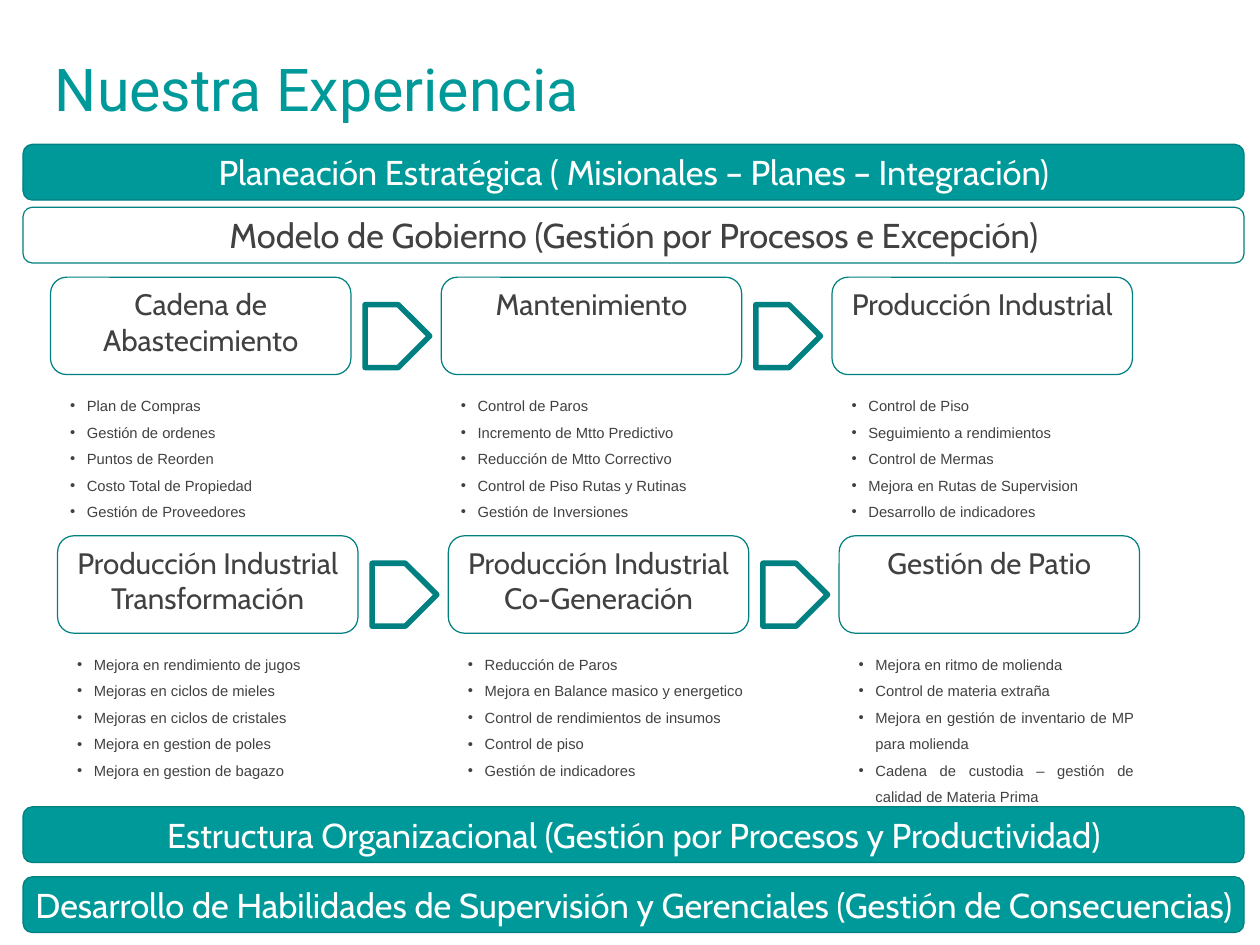
from pptx import Presentation
from pptx.dml.color import RGBColor
from pptx.enum.shapes import MSO_SHAPE as Shape
from pptx.enum.text import MSO_ANCHOR as Anchor, MSO_AUTO_SIZE as AutoSize, PP_ALIGN as Align
from pptx.oxml import parse_xml
from pptx.oxml.ns import nsdecls
from pptx.util import Emu, Pt

EMU_PER_PX = 9144
SLIDE_SIZE = (1422, 1067)
TEAL = RGBColor(0x00, 0x99, 0x99)
DARK_TEAL = RGBColor(0x00, 0x80, 0x80)
GRAY = RGBColor(0x41, 0x41, 0x41)
WHITE = RGBColor(0xFF, 0xFF, 0xFF)

BANDS = [
    (163, "Planeación Estratégica ( Misionales – Planes – Integración)", TEAL, WHITE),
    (234, "Modelo de Gobierno (Gestión por Procesos e Excepción)", None, GRAY),
    (911, "Estructura Organizacional (Gestión por Procesos y Productividad)", TEAL, WHITE),
    (990, "Desarrollo de Habilidades de Supervisión y Gerenciales (Gestión de Consecuencias)",
     TEAL, WHITE),
]

PROCESS_ROWS = [
    (57, 313, [
        ("Cadena de Abastecimiento",
         ["Plan de Compras", "Gestión de ordenes", "Puntos de Reorden",
          "Costo Total de Propiedad", "Gestión de Proveedores"]),
        ("Mantenimiento",
         ["Control de Paros", "Incremento de Mtto Predictivo", "Reducción de Mtto Correctivo",
          "Control de Piso Rutas y Rutinas", "Gestión de Inversiones"]),
        ("Producción Industrial",
         ["Control de Piso", "Seguimiento a rendimientos", "Control de Mermas",
          "Mejora en Rutas de Supervision", "Desarrollo de indicadores"]),
    ]),
    (65, 605, [
        ("Producción Industrial\nTransformación",
         ["Mejora en rendimiento de jugos", "Mejoras en ciclos de mieles",
          "Mejoras en ciclos de cristales", "Mejora en gestion de poles",
          "Mejora en gestion de bagazo"]),
        ("Producción Industrial\nCo-Generación",
         ["Reducción de Paros", "Mejora en Balance masico y energetico",
          "Control de rendimientos de insumos", "Control de piso", "Gestión de indicadores"]),
        ("Gestión de Patio",
         ["Mejora en ritmo de molienda", "Control de materia extraña",
          "Mejora en gestión de inventario de MP para molienda",
          "Cadena de custodia – gestión de calidad de Materia Prima"]),
    ]),
]
COLUMN_STEP = 441
PROCESS_WIDTH = 339


def px(*lengths):
    return [Emu(length * EMU_PER_PX) for length in lengths]


def set_margins(text_frame, horizontal, vertical):
    text_frame.margin_left, text_frame.margin_right = px(horizontal, horizontal)
    text_frame.margin_top, text_frame.margin_bottom = px(vertical, vertical)


def format_text(text_frame, font_name, size, color, alignment):
    for paragraph in text_frame.paragraphs:
        paragraph.alignment = alignment
        for run in paragraph.runs:
            run.font.name = font_name
            run.font.size = Pt(size)
            run.font.color.rgb = color


def add_outlined_shape(slide, kind, box, fill=None, line_width=1):
    shape = slide.shapes.add_shape(kind, *px(*box))
    shape.shadow.inherit = False
    if fill is None:
        shape.fill.background()
    else:
        shape.fill.solid()
        shape.fill.fore_color.rgb = fill
    shape.line.color.rgb = DARK_TEAL
    shape.line.width = Pt(line_width)
    return shape


def add_title(slide, text):
    title = slide.shapes.title
    title.left, title.top, title.width, title.height = px(62, 59, 1035, 81)
    text_frame = title.text_frame
    text_frame.text = text
    text_frame.auto_size = AutoSize.NONE
    text_frame.vertical_anchor = Anchor.MIDDLE
    set_margins(text_frame, 0, 0)
    format_text(text_frame, "Roboto", 48, TEAL, Align.LEFT)


def add_band(slide, top, text, fill, color):
    band = add_outlined_shape(slide, Shape.ROUNDED_RECTANGLE, (26, top, 1378, 63), fill)
    band.text_frame.text = text
    band.text_frame.word_wrap = False
    band.text_frame.vertical_anchor = Anchor.TOP
    format_text(band.text_frame, "Cabin", 28, color, Align.CENTER)


def add_process(slide, left, top, name):
    box = (left, top, PROCESS_WIDTH, 110)
    process = add_outlined_shape(slide, Shape.ROUNDED_RECTANGLE, box)
    process.text_frame.text = name
    process.text_frame.word_wrap = True
    process.text_frame.vertical_anchor = Anchor.TOP
    format_text(process.text_frame, "Cabin", 24, GRAY, Align.CENTER)


def add_bullets(slide, left, top, items):
    text_box = slide.shapes.add_textbox(*px(left, top, PROCESS_WIDTH, 164))
    text_frame = text_box.text_frame
    text_frame.text = "\n".join(items)
    text_frame.word_wrap = True
    text_frame.auto_size = AutoSize.SHAPE_TO_FIT_TEXT
    set_margins(text_frame, 14, 7)
    indent, = px(19)
    for paragraph in text_frame.paragraphs:
        properties = paragraph._p.get_or_add_pPr()
        properties.set("marL", str(indent))
        properties.set("indent", str(-indent))
        properties.append(parse_xml(f'<a:buFont {nsdecls("a")} typeface="Arial"/>'))
        properties.append(parse_xml(f'<a:buChar {nsdecls("a")} char="•"/>'))
        paragraph.line_spacing = 1.5
    format_text(text_frame, "Arial", 12, GRAY, Align.JUSTIFY)


def add_process_row(slide, row_left, top, processes):
    for column, (name, items) in enumerate(processes):
        left = row_left + column * COLUMN_STEP
        add_process(slide, left, top, name)
        add_bullets(slide, left + 8, top + 118, items)
        if column < len(processes) - 1:
            add_outlined_shape(slide, Shape.PENTAGON, (left + 355, top + 31, 73, 71),
                               line_width=4.5)


def main():
    presentation = Presentation()
    presentation.slide_width, presentation.slide_height = px(*SLIDE_SIZE)
    slide = presentation.slides.add_slide(presentation.slide_layouts[5])
    add_title(slide, "Nuestra Experiencia")
    for band in BANDS:
        add_band(slide, *band)
    for row in PROCESS_ROWS:
        add_process_row(slide, *row)
    presentation.save("out.pptx")


if __name__ == "__main__":
    main()
